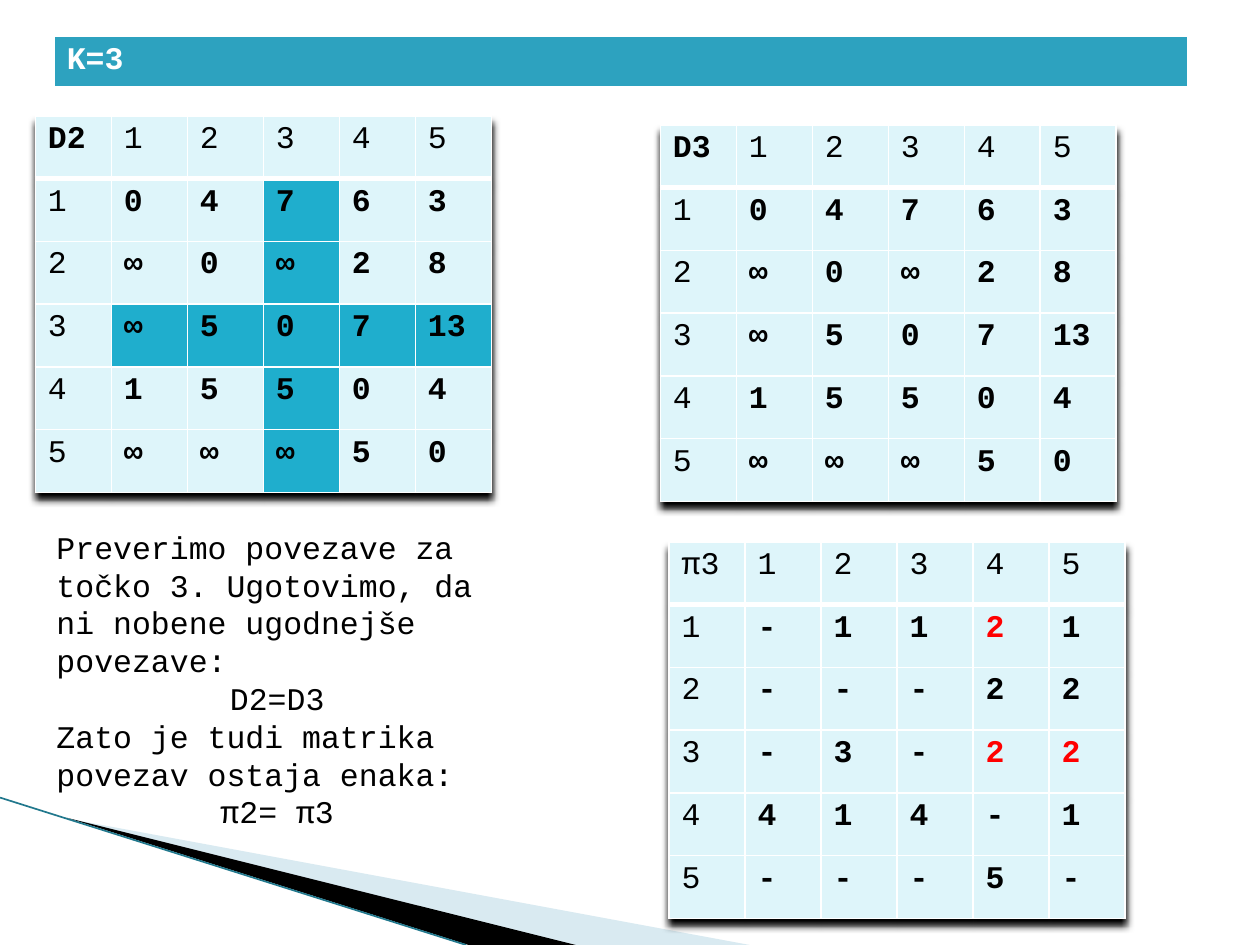
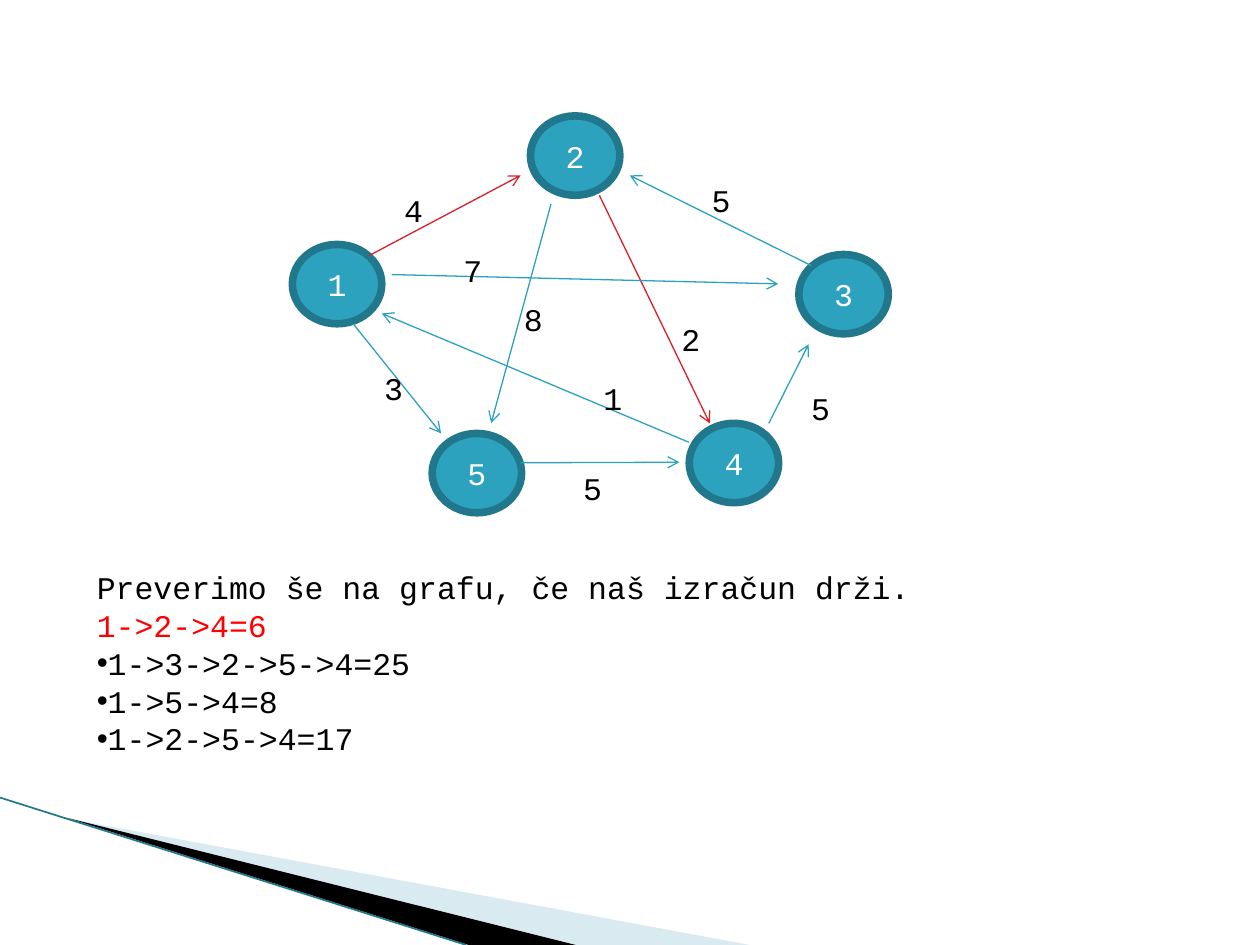
from lxml.etree import SubElement
from pptx import Presentation
from pptx.dml.color import RGBColor
from pptx.enum.shapes import MSO_CONNECTOR, MSO_SHAPE
from pptx.enum.text import MSO_ANCHOR, PP_ALIGN
from pptx.oxml import parse_xml
from pptx.oxml.ns import nsdecls, qn
from pptx.util import Inches, Pt

SLIDE_W, SLIDE_H = 10, 7.5
FONT, FONT_SIZE = "Courier New", 18
COLORS = {
    "text": "000000", "white": "FFFFFF", "red": "FF0000",
    "teal": "2DA2BF", "teal_dark": "21788D", "route": "DA1F28",
    "cell": "DEF5FA", "pivot": "1FAECD", "wedge": "A0CBDC",
}

# Shared corner decoration: outline, colour, opacity in percent
WEDGES = [
    ([(0.55, 6.5), (5.95, 7.5), (4.56, 7.5)], "wedge", 40),
    ([(0.53, 6.49), (4.57, 7.5), (3.72, 7.5)], "text", 100),
]
CORNER_LINE = [(0, 6.33), (3.7, 7.5)]

# Slide 1
STEP_TITLE = "K=3"
STEP_BAND = (0.43, 0.29, 9, 0.41)
PIVOT = 3
DISTANCES = [
    ["0", "4", "7", "6", "3"],
    ["∞", "0", "∞", "2", "8"],
    ["∞", "5", "0", "7", "13"],
    ["1", "5", "5", "0", "4"],
    ["∞", "∞", "∞", "5", "0"],
]
PREDECESSORS = [
    ["-", "1", "1", "2", "1"],
    ["-", "-", "-", "2", "2"],
    ["-", "3", "-", "2", "2"],
    ["4", "1", "4", "-", "1"],
    ["-", "-", "-", "5", "-"],
]
MATRIX_W, MATRIX_H = 3.62, 2.99
MATRICES = [
    {"name": "D2", "at": (0.28, 0.92), "values": DISTANCES, "pivot": PIVOT},
    {"name": "D3", "at": (5.24, 0.99), "values": DISTANCES},
    {"name": "π3", "at": (5.31, 4.3), "values": PREDECESSORS,
     "plain_name": True, "red": {(1, 4), (3, 4), (3, 5)}},
]
FINDING_BOX = (0.35, 4.14, 3.7, 2.6)
FINDING = [
    {"text": "Preverimo povezave za točko 3. Ugotovimo, da ni nobene ugodnejše povezave:"},
    {"text": "D2=D3", "align": PP_ALIGN.CENTER},
    {"text": "Zato je tudi matrika povezav ostaja enaka:"},
    {"text": "π2= π3", "align": PP_ALIGN.CENTER},
]

# Slide 2
NODE_W, NODE_H = 0.71, 0.63
NODES = {"2": (4.21, 0.92), "5": (3.43, 3.44), "4": (5.47, 3.36),
         "1": (2.32, 1.94), "3": (6.34, 2.02)}
# from, to, start and end offsets from node centres in node sizes, weight, weight position
EDGES = [
    ("1", "5", (0.18, 0.5), (-0.4, -0.5), "3", (2.95, 2.88)),
    ("1", "2", (0.36, -0.36), (-0.61, 0.25), "4", (3.11, 1.47)),
    ("5", "4", (0.49, -0.13), (-0.61, -0.01), "5", (4.53, 3.67)),
    ("3", "2", (-0.36, -0.36), (0.61, 0.25), "5", (5.55, 1.39)),
    ("4", "3", (0.39, -0.5), (-0.39, 0.63), "5", (6.34, 3.04)),
    ("2", "5", (-0.27, 0.61), (0.16, -0.63), "8", (4.06, 2.33)),
    ("2", "4", (0.27, 0.5), (-0.27, -0.5), "2", (5.31, 2.49)),
    ("1", "3", (0.61, -0.12), (-0.73, -0.13), "7", (3.58, 1.94)),
    ("4", "1", (-0.5, -0.26), (0.5, 0.37), "1", (4.69, 2.96)),
]
SHORTEST = {("1", "2"), ("2", "4")}
WEIGHT_SIZE = (0.36, 0.4)
CHECK_BOX = (0.67, 4.46, 8.66, 1.65)
CHECK = [
    {"text": "Preverimo še na grafu, če naš izračun drži."},
    {"text": "1->2->4=6", "color": "red"},
    {"text": "1->3->2->5->4=25", "bullet": True},
    {"text": "1->5->4=8", "bullet": True},
    {"text": "1->2->5->4=17", "bullet": True},
]


def rgb(name):
    return RGBColor.from_string(COLORS[name])


def inches(values):
    return [Inches(v) for v in values]


def write(paragraph, text, color="text", bold=False, align=None, bullet=False):
    if bullet:
        props = paragraph._p.get_or_add_pPr()
        SubElement(props, qn("a:buFont"), typeface="Arial")
        SubElement(props, qn("a:buChar"), char="•")
    if align is not None:
        paragraph.alignment = align
    run = paragraph.add_run()
    run.text = text
    run.font.name, run.font.size, run.font.bold = FONT, Pt(FONT_SIZE), bold
    run.font.color.rgb = rgb(color)


def add_text(slide, box, lines):
    frame = slide.shapes.add_textbox(*inches(box)).text_frame
    frame.word_wrap = True
    for i, line in enumerate(lines):
        write(frame.add_paragraph() if i else frame.paragraphs[0], **line)


def add_line(slide, start, end, color, width, arrow=False):
    line = slide.shapes.add_connector(MSO_CONNECTOR.STRAIGHT, *inches((*start, *end)))
    line.line.color.rgb = rgb(color)
    line.line.width = Pt(width)
    if arrow:
        SubElement(line.line._get_or_add_ln(), qn("a:tailEnd"), type="arrow")
    SubElement(line._element.spPr, qn("a:effectLst"))


def add_corner(slide):
    for points, color, opacity in WEDGES:
        start, *rest = [inches(point) for point in points]
        builder = slide.shapes.build_freeform(*start)
        builder.add_line_segments(rest, close=True)
        wedge = builder.convert_to_shape()
        wedge.shadow.inherit = False
        wedge.fill.solid()
        wedge.fill.fore_color.rgb = rgb(color)
        wedge.line.fill.background()
        if opacity < 100:
            fill_color = wedge._element.spPr.find(qn("a:solidFill"))[0]
            SubElement(fill_color, qn("a:alpha"), val=str(opacity * 1000))
    add_line(slide, *CORNER_LINE, "teal_dark", 0.95)


def add_grid(slide, box, rows, cols):
    """Add a table with equal rows and columns and return it."""
    table = slide.shapes.add_table(rows, cols, *inches(box)).table
    for column in table.columns:
        column.width = Inches(box[2] / cols)
    for row in table.rows:
        row.height = Inches(box[3] / rows)
    return table


def fill_cell(cell, text, fill, color="text", bold=False, top=1, bottom=1):
    props = cell._tc.get_or_add_tcPr()
    for side, width in (("lnL", 1), ("lnR", 1), ("lnT", top), ("lnB", bottom)):
        border = SubElement(props, qn(f"a:{side}"), w=str(Pt(width)))
        solid = SubElement(border, qn("a:solidFill"))
        SubElement(solid, qn("a:srgbClr"), val=COLORS["white"])
    cell.fill.solid()
    cell.fill.fore_color.rgb = rgb(fill)
    write(cell.text_frame.paragraphs[0], text, color, bold)


def add_table_shadow(table):
    table._tbl.tblPr.insert(0, parse_xml(
        f'<a:effectLst {nsdecls("a")}><a:outerShdw blurRad="50800" dist="50800" '
        f'dir="5400000"><a:srgbClr val="{COLORS["text"]}"/></a:outerShdw></a:effectLst>'))


def add_matrix(slide, name, at, values, pivot=None, plain_name=False, red=()):
    """Add a matrix with numbered headers, shading the pivot row and column."""
    size = len(values) + 1
    header = [name] + [str(i) for i in range(1, size)]
    rows = [header] + [[str(i), *row] for i, row in enumerate(values, 1)]
    table = add_grid(slide, (*at, MATRIX_W, MATRIX_H), size, size)
    for r, row in enumerate(rows):
        for c, text in enumerate(row):
            inner = r > 0 and c > 0
            corner = r == c == 0
            fill_cell(
                table.cell(r, c), text,
                fill="pivot" if inner and pivot in (r, c) else "cell",
                color="red" if (r, c) in red else "text",
                bold=inner or (corner and not plain_name),
                top=3 if r == 1 else 1, bottom=3 if r == 0 else 1)
    add_table_shadow(table)


def add_node(slide, label, at):
    node = slide.shapes.add_shape(MSO_SHAPE.OVAL, *inches((*at, NODE_W, NODE_H)))
    node.shadow.inherit = False
    node.fill.solid()
    node.fill.fore_color.rgb = rgb("teal")
    node.line.color.rgb = rgb("teal_dark")
    node.line.width = Pt(4.33)
    node.text_frame.vertical_anchor = MSO_ANCHOR.MIDDLE
    write(node.text_frame.paragraphs[0], label, "white", align=PP_ALIGN.CENTER)


def near_node(label, offset):
    left, top = NODES[label]
    return left + (0.5 + offset[0]) * NODE_W, top + (0.5 + offset[1]) * NODE_H


def build_matrices(slide):
    band = add_grid(slide, STEP_BAND, 1, 1)
    fill_cell(band.cell(0, 0), STEP_TITLE, "teal", "white", bold=True, bottom=3)
    for matrix in MATRICES:
        add_matrix(slide, **matrix)
    add_text(slide, FINDING_BOX, FINDING)


def build_graph(slide):
    for label, at in NODES.items():
        add_node(slide, label, at)
    for source, target, leave, arrive, weight, weight_at in EDGES:
        color = "route" if (source, target) in SHORTEST else "teal"
        add_line(slide, near_node(source, leave), near_node(target, arrive),
                 color, 0.75, arrow=True)
        add_text(slide, (*weight_at, *WEIGHT_SIZE), [{"text": weight}])
    add_text(slide, CHECK_BOX, CHECK)


def main():
    deck = Presentation()
    deck.slide_width, deck.slide_height = inches((SLIDE_W, SLIDE_H))
    for build in (build_matrices, build_graph):
        slide = deck.slides.add_slide(deck.slide_layouts[6])
        add_corner(slide)
        build(slide)
    deck.save("out.pptx")


if __name__ == "__main__":
    main()
